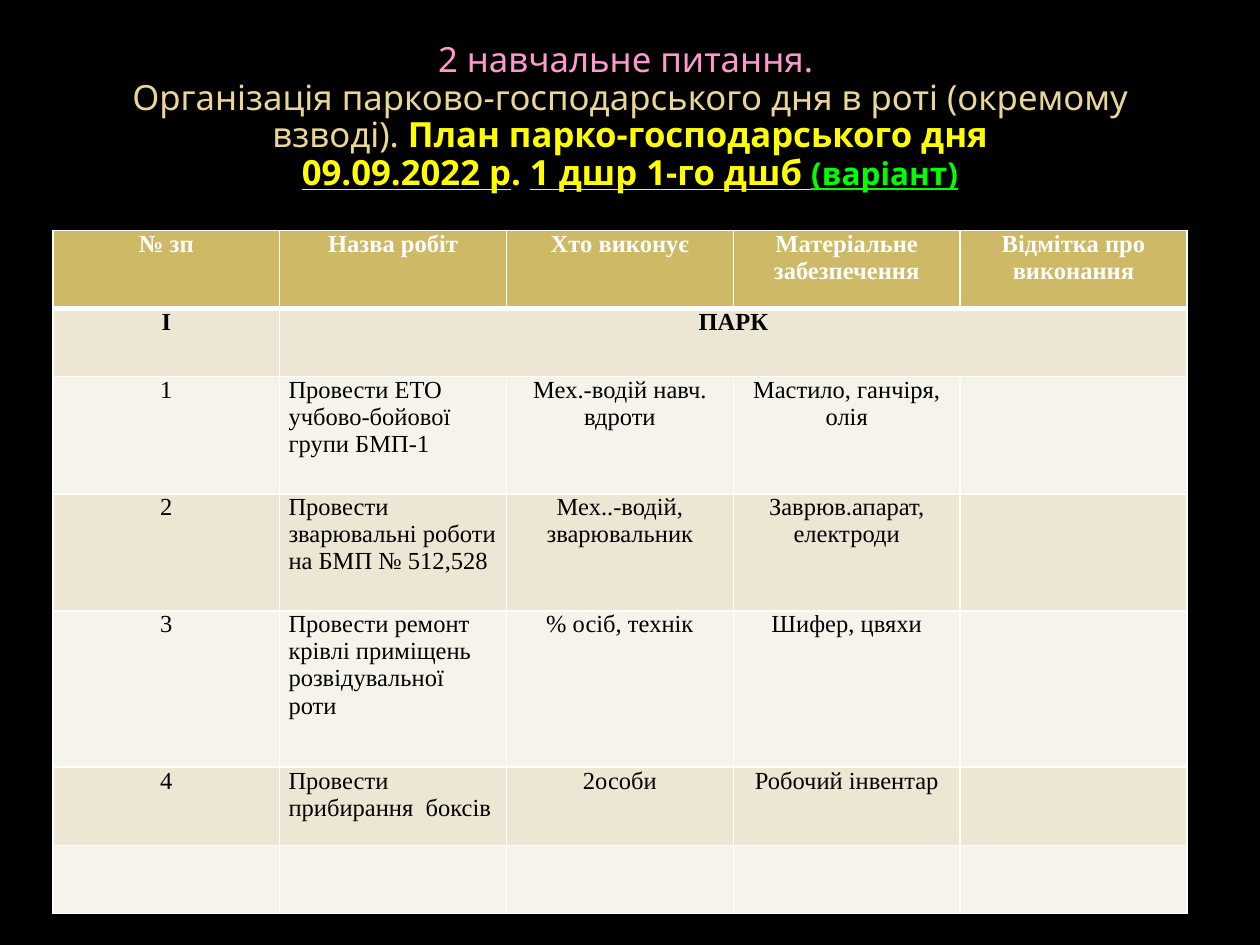
from lxml import etree
from pptx import Presentation, util as u
from pptx.dml.color import RGBColor
from pptx.enum import text
from pptx.oxml import ns

CREAM, PINK, YELLOW, GREEN = "EAD696", "FF99CC", "FFFF00", "00FF00"
WHITE, BLACK, GOLD = "FFFFFF", "000000", "CEB966"
BANDS = ("F6F3EA", "EDE6D3")


def add_text(paragraph, content, font="Times New Roman", size=14, color=BLACK,
             bold=False, underline=False, align=text.PP_ALIGN.CENTER):
    paragraph.alignment = align
    run = paragraph.add_run()
    run.text = content
    run.font.name, run.font.size = font, u.Pt(size)
    run.font.bold, run.font.underline = bold, underline
    run.font.color.rgb = RGBColor.from_string(color)


def set_borders(cell, **widths):
    """Draw white borders, given in points by side: L, R, T, B."""
    properties = cell._tc.get_or_add_tcPr()
    for position, (side, width) in enumerate(widths.items()):
        line = etree.Element(ns.qn(f"a:ln{side}"), w=str(u.Pt(width)))
        fill = etree.SubElement(line, ns.qn("a:solidFill"))
        etree.SubElement(fill, ns.qn("a:srgbClr"), val=WHITE)
        properties.insert(position, line)


presentation = Presentation()
presentation.slide_width, presentation.slide_height = u.Inches(10), u.Inches(7.5)
slide = presentation.slides.add_slide(presentation.slide_layouts[5])
slide.background.fill.solid()
slide.background.fill.fore_color.rgb = RGBColor.from_string(BLACK)

# Title
title = slide.shapes.title
title.left, title.top = u.Inches(0.5), u.Inches(0.3)
title.width, title.height = u.Inches(9), u.Inches(1.53)
frame = title.text_frame
frame.word_wrap = True
frame.auto_size = text.MSO_AUTO_SIZE.NONE
frame.vertical_anchor = text.MSO_ANCHOR.MIDDLE
frame.margin_top, frame.margin_bottom = 0, u.Inches(0.26)
heading = frame.paragraphs[0]
heading.line_spacing = 0.9
heading.space_before = u.Pt(0)

title_lines = [
    [("2 навчальне питання. ", dict(color=PINK))],
    [("Організація парково-господарського дня в роті (окремому взводі). ", dict(color=CREAM)),
     ("План парко-господарського дня", dict(color=YELLOW, bold=True))],
    [("09.09.2022 р", dict(color=YELLOW, bold=True, underline=True)),
     (". ", dict(color=YELLOW, bold=True)),
     ("1 дшр 1-го дшб ", dict(color=YELLOW, bold=True, underline=True)),
     ("(варіант)", dict(color=GREEN, bold=True, underline=True, size=18))],
]
for number, line in enumerate(title_lines):
    if number:
        heading.add_line_break()
    for content, style in line:
        add_text(heading, content, **{"font": "Noto Sans", "size": 19.8, **style})

# Work plan
plan = [
    ["№ зп", "Назва робіт", "Хто виконує", "Матеріальне забезпечення", "Відмітка про виконання"],
    ["І", "ПАРК", "", "", ""],
    ["1", "Провести ЕТО учбово-бойової групи БМП-1", "Мех.-водій навч. вдроти",
     "Мастило, ганчіря, олія", ""],
    ["2", "Провести зварювальні роботи на БМП № 512,528", "Мех..-водій,\nзварювальник",
     "Заврюв.апарат, електроди", ""],
    ["3", "Провести ремонт крівлі приміщень розвідувальної роти", "% осіб, технік",
     "Шифер, цвяхи", ""],
    ["4", "Провести прибирання  боксів", "2особи", "Робочий інвентар", ""],
    [""] * 5,
]
row_heights = [0.62, 0.54, 0.93, 0.93, 1.24, 0.62, 0.54]
table = slide.shapes.add_table(len(plan), 5, u.Inches(0.42), u.Inches(1.83),
                               u.Inches(9), u.Inches(sum(row_heights))).table
for column in table.columns:
    column.width = u.Inches(9 / 5)

for r, (height, values) in enumerate(zip(row_heights, plan)):
    table.rows[r].height = u.Inches(height)
    for c, value in enumerate(values):
        cell = table.cell(r, c)
        cell.margin_left = cell.margin_right = u.Inches(0.07)
        cell.margin_top = cell.margin_bottom = 0
        cell.fill.solid()
        cell.fill.fore_color.rgb = RGBColor.from_string(BANDS[r % 2] if r else GOLD)
        set_borders(cell, L=1, R=1, T=3 if r == 1 else 1, B=1 if r else 3)
        left_aligned = c == 1 and r > 1
        for i, content in enumerate(value.split("\n") if value else []):
            paragraph = cell.text_frame.add_paragraph() if i else cell.text_frame.paragraphs[0]
            add_text(paragraph, content, color=BLACK if r else WHITE, bold=r < 2,
                     align=text.PP_ALIGN.LEFT if left_aligned else text.PP_ALIGN.CENTER)
table.cell(1, 1).merge(table.cell(1, 4))

presentation.save("out.pptx")
